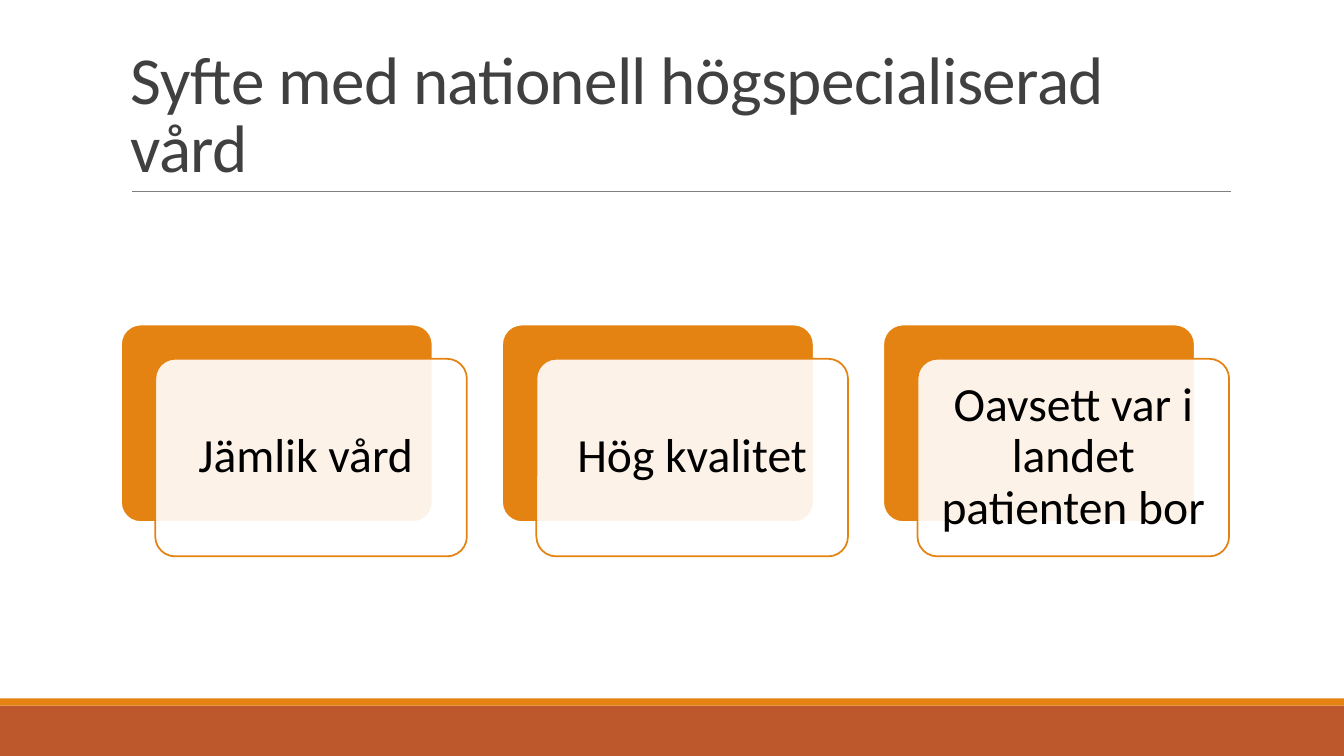
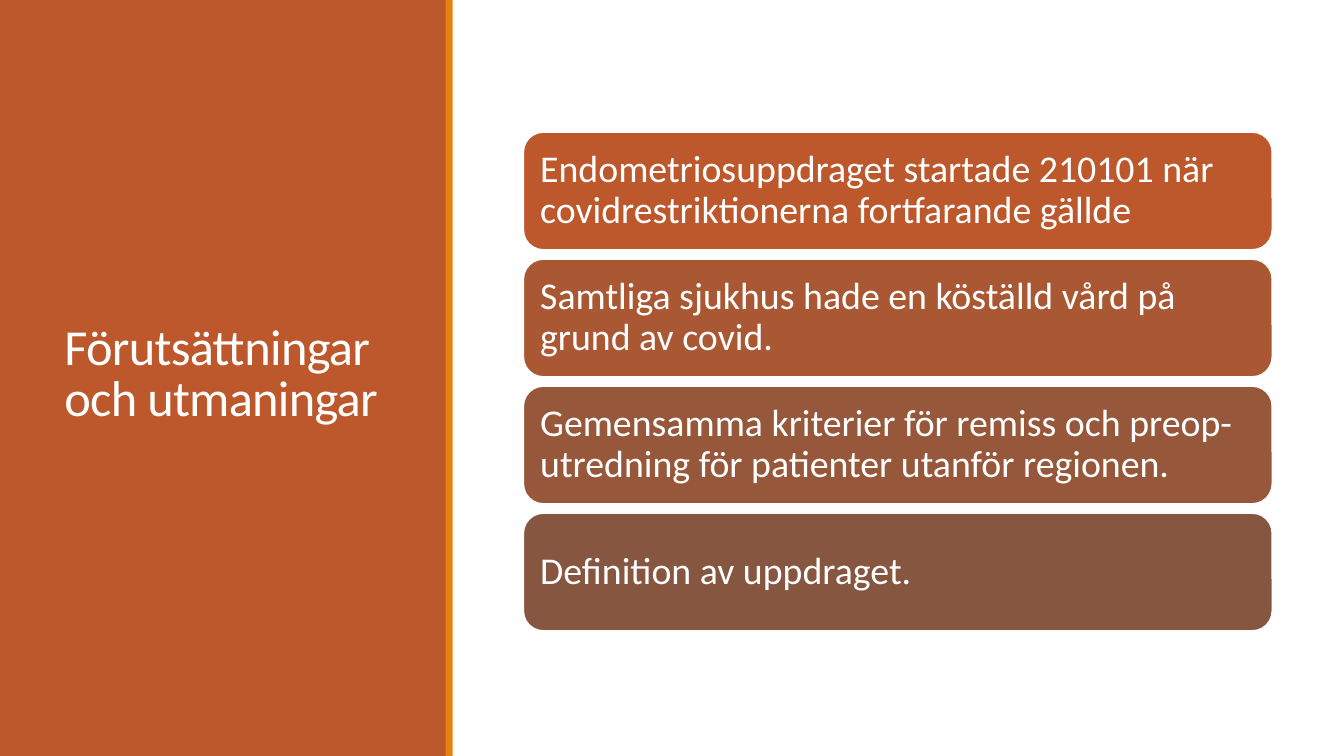
from pptx import Presentation
from pptx.dml.color import RGBColor
from pptx.enum.shapes import MSO_CONNECTOR, MSO_SHAPE
from pptx.enum.text import MSO_ANCHOR, PP_ALIGN
from pptx.oxml.ns import qn
from pptx.util import Inches, Pt
from lxml.etree import SubElement

FONT = "Calibri"
WIDTH, HEIGHT = 13.33, 7.5
COLORS = {
    "rust": "BD582C",
    "orange": "E48312",
    "white": "FFFFFF",
    "black": "000000",
    "title": "404040",
    "rule": "808080",
    "step_2": "AA5834",
    "step_3": "97573A",
    "step_4": "865640",
}
GOALS = ["Jämlik vård ", "Hög kvalitet", "Oavsett var i landet patienten bor"]
CHALLENGES = [
    ("Endometriosuppdraget startade 210101 när covidrestriktionerna fortfarande gällde", "rust"),
    ("Samtliga sjukhus hade en köställd vård på grund av covid.", "step_2"),
    ("Gemensamma kriterier för remiss och preop- utredning för patienter utanför regionen.", "step_3"),
    ("Definition av uppdraget.", "step_4"),
]


def color(name):
    return RGBColor.from_string(COLORS[name])


def write_text(shape, text, size, color_name, line_spacing, anchor=MSO_ANCHOR.MIDDLE,
               align=PP_ALIGN.LEFT, inset=None):
    frame = shape.text_frame
    frame.text = text
    frame.word_wrap = True
    frame.vertical_anchor = anchor
    if inset is not None:
        frame.margin_left = frame.margin_right = Inches(inset)
        frame.margin_top = frame.margin_bottom = Inches(inset)
    paragraph = frame.paragraphs[0]
    paragraph.alignment = align
    paragraph.line_spacing = line_spacing
    span = paragraph.runs[0]
    span.font.name = FONT
    span.font.size = Pt(size)
    span.font.color.rgb = color(color_name)
    return span


def add_title(page, text, area, size, color_name, anchor):
    box = page.shapes.add_textbox(*map(Inches, area))
    span = write_text(box, text, size, color_name, 0.85, anchor)
    span.font._element.set("spc", "-50")


def add_box(page, kind, area, fill, line=None):
    shape = page.shapes.add_shape(kind, *map(Inches, area))
    shape.shadow.inherit = False
    shape.fill.solid()
    shape.fill.fore_color.rgb = color(fill)
    if line:
        shape.line.color.rgb = color(line)
        shape.line.width = Pt(1.25)
    else:
        shape.line.fill.background()
    return shape


def add_band(page, area, fill):
    add_box(page, MSO_SHAPE.RECTANGLE, area, fill)


def add_rounded(page, area, fill, line, corner):
    shape = add_box(page, MSO_SHAPE.ROUNDED_RECTANGLE, area, fill, line)
    shape.adjustments[0] = corner
    return shape


def set_opacity(shape, percent):
    fill_color = shape._element.spPr.find(qn("a:solidFill"))[0]
    SubElement(fill_color, qn("a:alpha")).set("val", str(percent * 1000))


def add_rule(page, left, right, top):
    rule = page.shapes.add_connector(
        MSO_CONNECTOR.STRAIGHT, Inches(left), Inches(top), Inches(right), Inches(top))
    rule.line.color.rgb = color("rule")
    rule.line.width = Pt(0.5)
    SubElement(rule._element.spPr, qn("a:effectLst"))


def add_goal_card(page, left, top, text):
    width, height, offset = 3.09, 1.96, 0.34
    add_rounded(page, (left, top, width, height), "orange", "white", 0.1)
    front = add_rounded(
        page, (left + offset, top + offset, width, height), "white", "orange", 0.1)
    set_opacity(front, 90)
    write_text(front, text, 34, "black", 0.9, align=PP_ALIGN.CENTER, inset=0.14)


def build_purpose(page):
    add_band(page, (0, 7, WIDTH, 0.5), "rust")
    add_band(page, (0, 6.93, WIDTH, 0.07), "orange")
    add_rule(page, 1.31, 12.21, 1.9)
    add_title(page, "Syfte med nationell högspecialiserad vård",
              (1.2, 0.31, 11, 1.59), 48, "title", MSO_ANCHOR.BOTTOM)
    for index, goal in enumerate(GOALS):
        add_goal_card(page, 1.2 + index * 3.78, 3.22, goal)


def build_challenges(page):
    add_band(page, (0, 0, 4.43, HEIGHT), "rust")
    add_title(page, "Förutsättningar och utmaningar",
              (0.54, 0.57, 3.37, 6.31), 36, "white", MSO_ANCHOR.MIDDLE)
    add_band(page, (4.42, 0, 0.07, HEIGHT), "orange")
    for index, (text, fill) in enumerate(CHALLENGES):
        bar = add_rounded(page, (5.19, 1.31 + index * 1.26, 7.43, 1.17), fill, "white", 0.17)
        write_text(bar, text, 27, "white", 0.9, inset=0.11)


def main():
    deck = Presentation()
    deck.slide_width, deck.slide_height = Inches(WIDTH), Inches(HEIGHT)
    for build in (build_purpose, build_challenges):
        build(deck.slides.add_slide(deck.slide_layouts[6]))
    deck.save("out.pptx")


if __name__ == "__main__":
    main()
